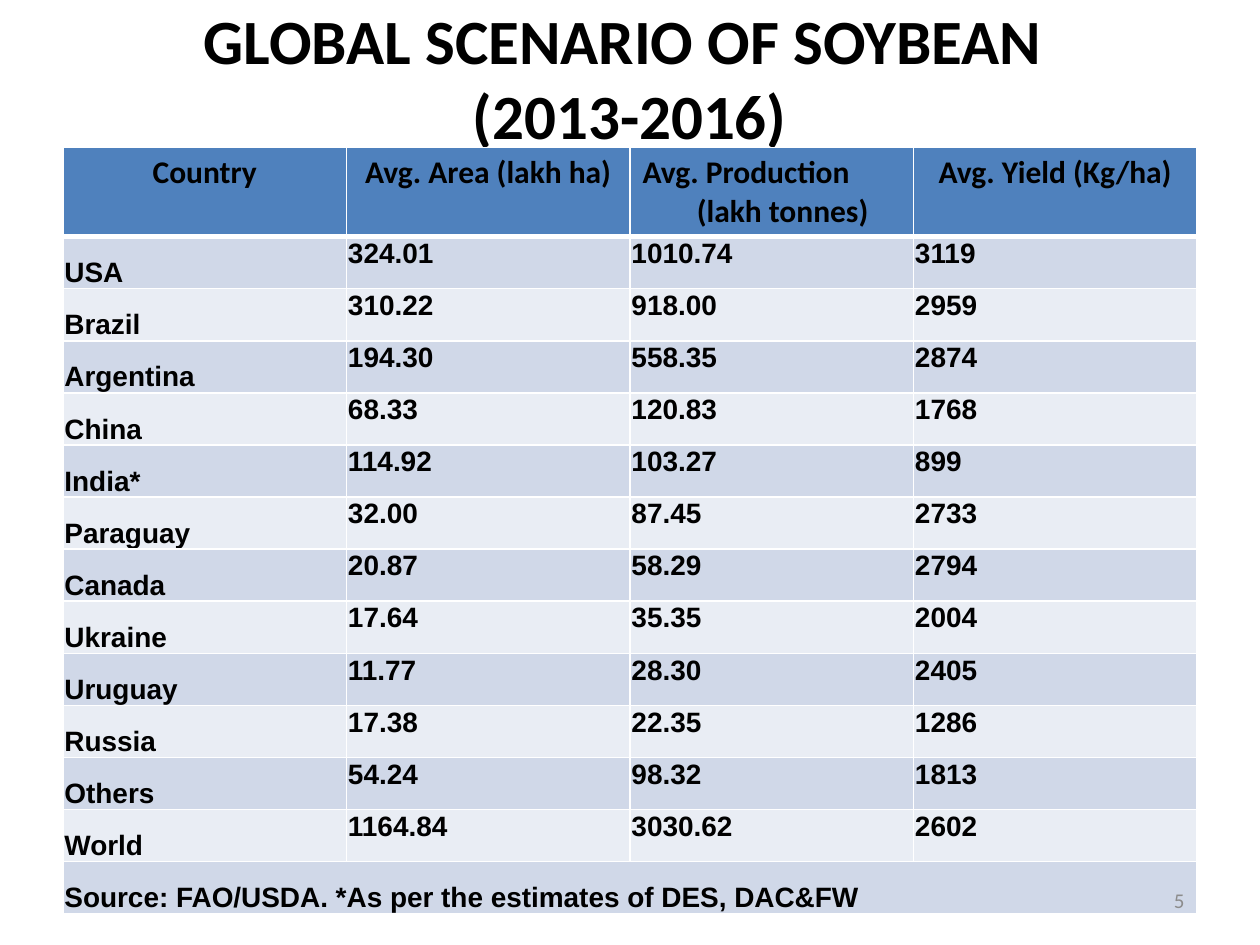
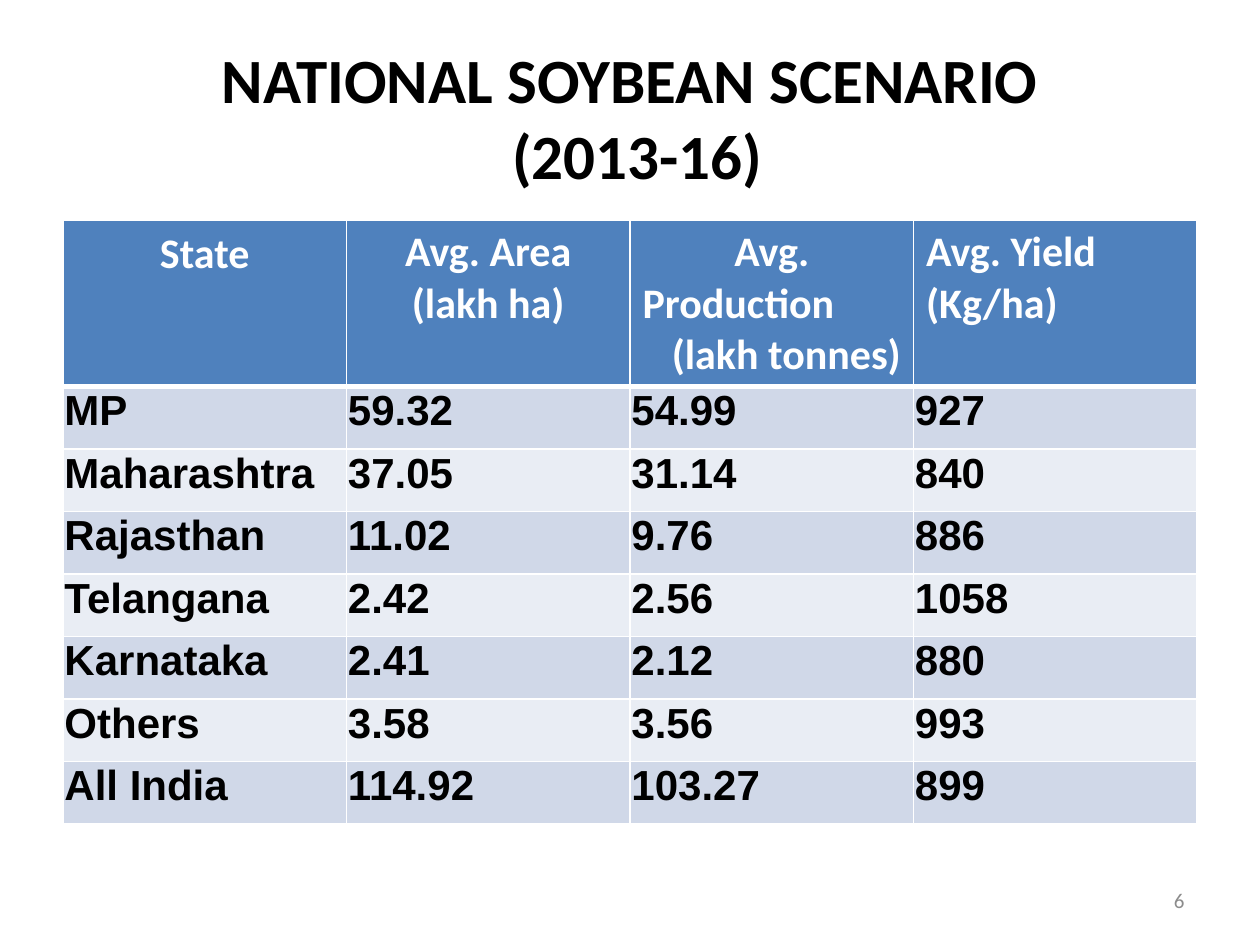
import pptx
import pptx.dml.color
import pptx.enum.text
import pptx.oxml
import pptx.oxml.ns
import pptx.util
from pptx.util import Cm, Pt

ALIGN = pptx.enum.text.PP_ALIGN
ANCHOR = pptx.enum.text.MSO_ANCHOR

COLORS = {
    "text": "000000",
    "header": "4F81BD",
    "header_text": "FFFFFF",
    "odd_row": "D0D8E8",
    "even_row": "E9EDF4",
    "rule": "FFFFFF",
    "number": "8C8C8C",
}
LEFT, WIDTH = 1.27, 22.86

GLOBAL_ROWS = [
    ("USA", "324.01", "1010.74", "3119"),
    ("Brazil", "310.22", "918.00", "2959"),
    ("Argentina", "194.30", "558.35", "2874"),
    ("China", "68.33", "120.83", "1768"),
    ("India*", "114.92", "103.27", "899"),
    ("Paraguay", "32.00", "87.45", "2733"),
    ("Canada", "20.87", "58.29", "2794"),
    ("Ukraine", "17.64", "35.35", "2004"),
    ("Uruguay", "11.77", "28.30", "2405"),
    ("Russia", "17.38", "22.35", "1286"),
    ("Others", "54.24", "98.32", "1813"),
    ("World", "1164.84", "3030.62", "2602"),
]
GLOBAL_SOURCE = "Source: FAO/USDA. *As per the estimates of DES, DAC&FW"

NATIONAL_ROWS = [
    ("MP", "59.32", "54.99", "927"),
    ("Maharashtra", "37.05", "31.14", "840"),
    ("Rajasthan", "11.02", "9.76", "886"),
    ("Telangana", "2.42", "2.56", "1058"),
    ("Karnataka", "2.41", "2.12", "880"),
    ("Others", "3.58", "3.56", "993"),
    ("All India", "114.92", "103.27", "899"),
]

# Each header cell is a list of (line, alignment, left margin in cm).
GLOBAL_HEADER = [
    [("Country", ALIGN.CENTER, 0)],
    [("Avg. Area (lakh ha)", ALIGN.CENTER, 0)],
    [("Avg. Production", ALIGN.LEFT, 0), ("(lakh tonnes)", ALIGN.CENTER, 0.44)],
    [("Avg. Yield (Kg/ha)", ALIGN.CENTER, 0)],
]
NATIONAL_HEADER = [
    [("State", ALIGN.CENTER, 0)],
    [("Avg. Area (lakh ha)", ALIGN.CENTER, 0)],
    [("Avg.", ALIGN.CENTER, 0), ("Production", ALIGN.LEFT, 0),
     ("(lakh tonnes)", ALIGN.RIGHT, 0)],
    [("Avg. Yield (Kg/ha)", ALIGN.LEFT, 0)],
]


def rgb(name):
    return pptx.dml.color.RGBColor.from_string(COLORS[name])


def style(paragraph, font_name, size, color, bold=True, alignment=ALIGN.LEFT):
    paragraph.alignment = alignment
    font = paragraph.font
    font.name, font.size, font.bold = font_name, Pt(size), bold
    font.color.rgb = rgb(color)


def add_text(slide, text, left, top, width, height, size, color, bold, alignment):
    """Add one vertically centred Calibri paragraph; lengths in cm."""
    text_box = slide.shapes.add_textbox(Cm(left), Cm(top), Cm(width), Cm(height))
    frame = text_box.text_frame
    frame.word_wrap = True
    frame.vertical_anchor = ANCHOR.MIDDLE
    paragraph = frame.paragraphs[0]
    paragraph.text = text
    style(paragraph, "Calibri", size, color, bold, alignment)


def add_title(slide, text, top, height):
    add_text(slide, text, LEFT, top, WIDTH, height, 36, "text", True, ALIGN.CENTER)


def add_slide_number(slide, number):
    add_text(slide, str(number), 18.2, 17.65, 5.93, 1.01, 12, "number", False, ALIGN.RIGHT)


def set_borders(cell, top=1, bottom=1):
    """Draw the cell's rules, widths in points."""
    properties = cell._tc.get_or_add_tcPr()
    for side, points in (("L", 1), ("R", 1), ("T", top), ("B", bottom)):
        properties.append(pptx.oxml.parse_xml(
            f'<a:ln{side} {pptx.oxml.ns.nsdecls("a")} w="{Pt(points)}"><a:solidFill>'
            f'<a:srgbClr val="{COLORS["rule"]}"/></a:solidFill></a:ln{side}>'))


def set_fill(cell, color):
    cell.fill.solid()
    cell.fill.fore_color.rgb = rgb(color)


def set_margins(cell, side, top):
    cell.margin_left = cell.margin_right = Cm(side)
    cell.margin_top, cell.margin_bottom = Cm(top), 0


def fill_header(table, header, size, color):
    for cell, lines in zip(table.rows[0].cells, header):
        set_borders(cell, bottom=3)
        set_fill(cell, "header")
        frame = cell.text_frame
        frame.text = "\n".join(line for line, _, _ in lines)
        for paragraph, (_, alignment, margin) in zip(frame.paragraphs, lines):
            style(paragraph, "Calibri", size, color, alignment=alignment)
            if margin:
                paragraph._p.get_or_add_pPr().set("marL", str(Cm(margin)))
    first_cell = table.cell(0, 0)
    set_margins(first_cell, 0.18, 0)
    first_cell.text_frame.paragraphs[0].line_spacing = 1.15


def fill_body(table, rows, size, name_anchor):
    for row_index, values in enumerate(rows, start=1):
        for column, value in enumerate(values):
            cell = table.cell(row_index, column)
            set_borders(cell, top=3 if row_index == 1 else 1)
            set_fill(cell, "odd_row" if row_index % 2 else "even_row")
            set_margins(cell, 0.03, 0.03)
            cell.vertical_anchor = ANCHOR.TOP if column else name_anchor
            paragraph = cell.text_frame.paragraphs[0]
            paragraph.text = value
            style(paragraph, "Arial", size, "text")


def add_crop_table(slide, header, rows, top, header_height, row_height,
                   header_size, header_color, body_size, name_anchor):
    height = header_height + row_height * len(rows)
    frame = slide.shapes.add_table(len(rows) + 1, len(header),
                                   Cm(LEFT), Cm(top), Cm(WIDTH), Cm(height))
    table = frame.table
    for row in table.rows:
        row.height = Cm(row_height)
    table.rows[0].height = Cm(header_height)
    fill_header(table, header, header_size, header_color)
    fill_body(table, rows, body_size, name_anchor)
    return table


def build_global_slide(slide):
    add_title(slide, "GLOBAL SCENARIO OF SOYBEAN \v(2013-2016)", 0.5, 2.1)
    rows = GLOBAL_ROWS + [(GLOBAL_SOURCE, "", "", "")]
    table = add_crop_table(slide, GLOBAL_HEADER, rows, 2.97, 1.8, 1.05,
                           18, "text", 16, ANCHOR.BOTTOM)
    last_row = len(rows)
    table.cell(last_row, 0).merge(table.cell(last_row, 3))
    add_slide_number(slide, 5)


def build_national_slide(slide):
    add_title(slide, "NATIONAL SOYBEAN SCENARIO\v (2013-16)", 0.76, 3.18)
    add_crop_table(slide, NATIONAL_HEADER, NATIONAL_ROWS, 4.45, 3.34, 1.26,
                   24, "header_text", 24, ANCHOR.TOP)
    add_slide_number(slide, 6)


def main():
    presentation = pptx.Presentation()
    presentation.slide_width, presentation.slide_height = Cm(25.4), Cm(19.05)
    blank_layout = presentation.slide_layouts[6]
    for build_slide in (build_global_slide, build_national_slide):
        build_slide(presentation.slides.add_slide(blank_layout))
    presentation.save("out.pptx")


if __name__ == "__main__":
    main()
